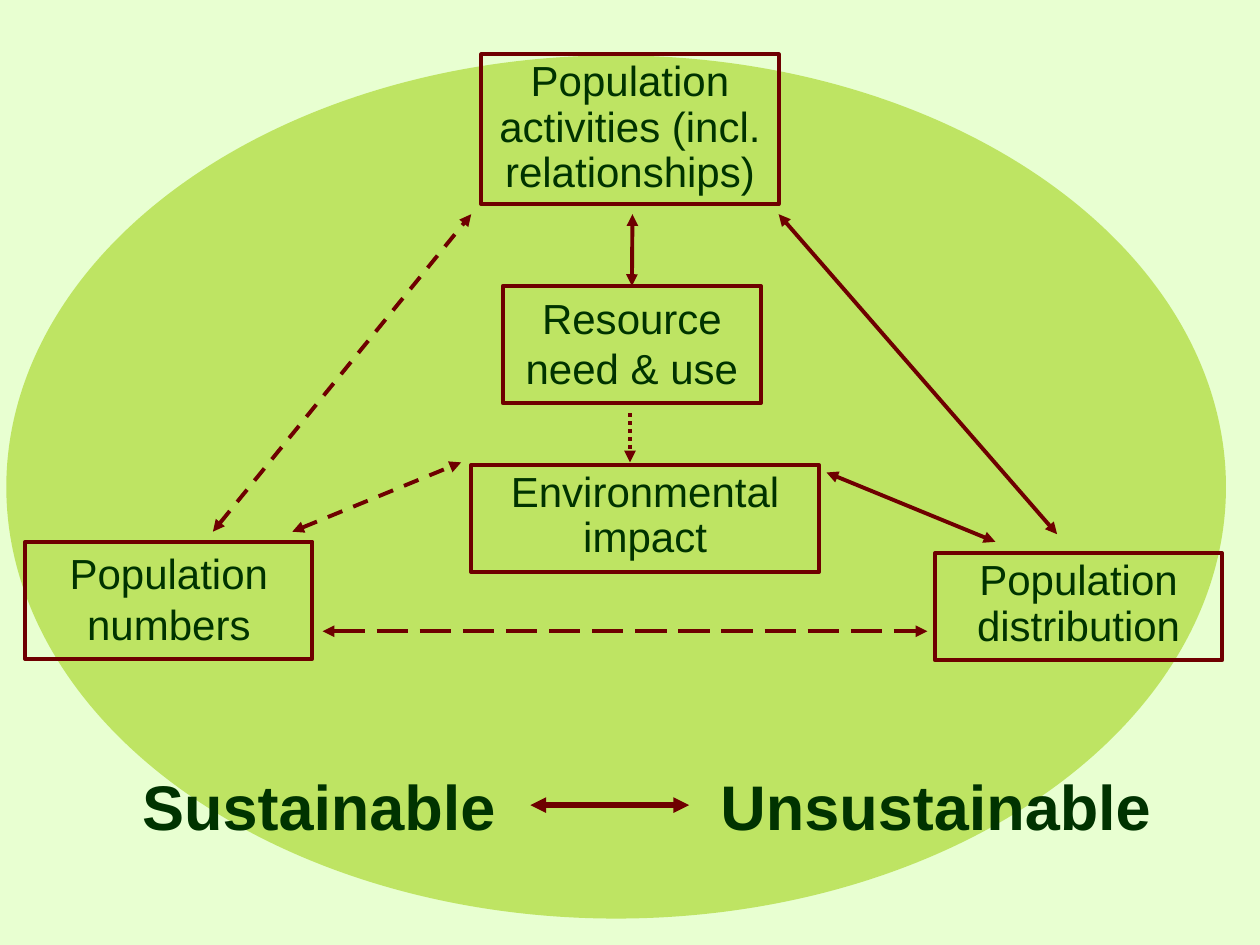
from pptx import Presentation
from pptx.dml.color import RGBColor
from pptx.enum.dml import MSO_LINE
from pptx.enum.shapes import MSO_CONNECTOR, MSO_SHAPE
from pptx.enum.text import MSO_ANCHOR, PP_ALIGN
from pptx.oxml.ns import qn
from pptx.util import Inches, Pt
from lxml.etree import SubElement

MINT = RGBColor(0xE8, 0xFF, 0xD1)
LIME = RGBColor(0x99, 0xCC, 0x00)
WINE = RGBColor(0x6E, 0x00, 0x00)
GREEN = RGBColor(0x00, 0x33, 0x00)


def write(shape, text, size, align, bold=False, space=1.0):
    frame = shape.text_frame
    frame.word_wrap = True
    frame.vertical_anchor = MSO_ANCHOR.TOP
    frame.text = text
    para = frame.paragraphs[0]
    para.alignment = align
    para.line_spacing = space
    font = para.runs[0].font
    font.name = "Arial"
    font.size = Pt(size)
    font.bold = bold
    font.color.rgb = GREEN


def arrow(start, end, dash=None, both=True, width=2.25):
    ends = [Inches(n) for n in (*start, *end)]
    link = slide.shapes.add_connector(MSO_CONNECTOR.STRAIGHT, *ends)
    link.line.color.rgb = WINE
    link.line.width = Pt(width)
    if dash:
        link.line.dash_style = dash
    props = link.line._get_or_add_ln()
    for tag in ("a:headEnd", "a:tailEnd") if both else ("a:tailEnd",):
        SubElement(props, qn(tag), type="triangle")
    SubElement(link._element.spPr, qn("a:effectLst"))
    return link


deck = Presentation()
deck.slide_width = Inches(10)
deck.slide_height = Inches(7.5)
slide = deck.slides.add_slide(deck.slide_layouts[6])
slide.background.fill.solid()
slide.background.fill.fore_color.rgb = MINT

oval = slide.shapes.add_shape(
    MSO_SHAPE.OVAL, Inches(0.05), Inches(0.44), Inches(9.68), Inches(6.85))
oval.shadow.inherit = False
oval.fill.solid()
oval.fill.fore_color.rgb = LIME
oval.line.fill.background()
color = oval._element.spPr.find(qn("a:solidFill"))[0]
SubElement(color, qn("a:alpha"), val="52000")

boxes = {}
for text, left, top, width, height, space in [
    ("Population activities (incl. relationships)", 3.82, 0.43, 2.36, 1.19, 0.9),
    ("Resource need & use", 3.99, 2.27, 2.05, 0.93, 1.0),
    ("Environmental impact", 3.74, 3.69, 2.76, 0.85, 0.9),
    ("Population distribution", 7.42, 4.39, 2.28, 0.85, 0.9),
    ("Population numbers", 0.2, 4.3, 2.28, 0.93, 1.0),
]:
    box = slide.shapes.add_shape(
        MSO_SHAPE.RECTANGLE, Inches(left), Inches(top), Inches(width), Inches(height))
    box.shadow.inherit = False
    box.fill.background()
    box.line.color.rgb = WINE
    box.line.width = Pt(2.25)
    write(box, text, 24, PP_ALIGN.CENTER, space=space)
    boxes[text] = box

need = arrow((5.02, 1.7), (5, 2.27))
need.end_connect(boxes["Resource need & use"], 0)
arrow((5, 3.28), (5, 3.67), MSO_LINE.ROUND_DOT, both=False)
arrow((2.56, 5.01), (7.36, 5.01), MSO_LINE.LONG_DASH)
arrow((2.32, 4.22), (3.66, 3.67), MSO_LINE.DASH)
arrow((1.69, 4.22), (3.74, 1.7), MSO_LINE.DASH)
arrow((6.56, 3.75), (7.9, 4.3))
arrow((8.39, 4.24), (6.18, 1.7))

for text, left, width in [("Sustainable", 1.03, 3.1), ("Unsustainable", 5.62, 3.8)]:
    label = slide.shapes.add_textbox(
        Inches(left), Inches(6.04), Inches(width), Inches(0.71))
    write(label, text, 36, PP_ALIGN.LEFT, bold=True)
arrow((4.21, 6.39), (5.47, 6.39), width=3)

deck.save("out.pptx")
